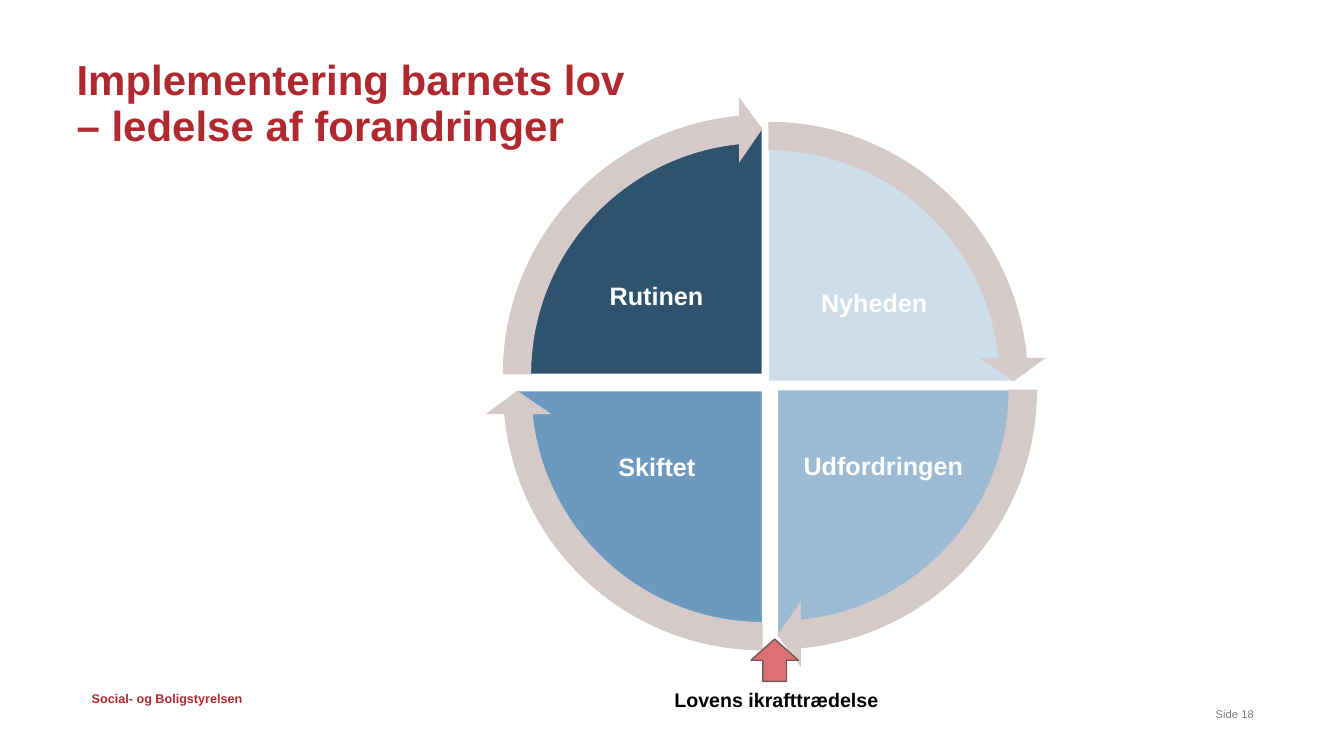
from pptx import Presentation
from pptx.dml.color import RGBColor
from pptx.enum.shapes import MSO_SHAPE
from pptx.enum.text import MSO_ANCHOR, MSO_AUTO_SIZE, PP_ALIGN
from pptx.util import Inches, Pt

COLUMNS, ROWS = 40, 22.5
SLIDE_WIDTH, SLIDE_HEIGHT = Inches(13.33), Inches(7.5)
COLORS = {
    "brand": "AF292E", "number": "7C7679", "white": "FFFFFF", "black": "000000",
    "ring": "D5CAC9", "marker": "DE7074", "marker_line": "705B59",
    "novelty": "CEDDEA", "challenge": "9CBBD5", "shift": "6B99C0", "routine": "2F526F",
}
FULL_TURN, QUARTER_TURN, TOP = 216, 54, 162
HEAD_ANGLE, RING_THICKNESS, HEAD_WIDTH = 3.275, 0.051, 0.059
WEDGE_DIAMETER, RING_DIAMETER = 14.73, 16.56
LABEL_SIZE, LABEL_OFFSET = (5.43, 4.05), (3.15, 2.3)
QUARTERS = [
    ("Nyheden", "novelty", (22.87, 11.35), (1, -1)),
    ("Udfordringen", "challenge", (23.14, 11.6), (1, 1)),
    ("Skiftet", "shift", (22.7, 11.63), (-1, 1)),
    ("Rutinen", "routine", (22.69, 11.14), (-1, -1)),
]


def place(column, row, columns, rows):
    """Turn grid cells into left, top, width and height."""
    cell_width, cell_height = SLIDE_WIDTH / COLUMNS, SLIDE_HEIGHT / ROWS
    return (round(column * cell_width), round(row * cell_height),
            round(columns * cell_width), round(rows * cell_height))


def centered(center, width, height):
    """Return the grid area of the given size around a centre."""
    return center[0] - width / 2, center[1] - height / 2, width, height


def apply(target, values):
    """Set every attribute named in a dict of values."""
    for name, value in values.items():
        setattr(target, name, value)


def write(box, text, size, color, bold=True, align=PP_ALIGN.LEFT,
          anchor=MSO_ANCHOR.TOP, inset=0, spacing=1.0):
    """Fill a box with one formatted paragraph."""
    frame = box.text_frame
    margins = ("margin_left", "margin_top", "margin_right", "margin_bottom")
    apply(frame, {"word_wrap": True, "auto_size": MSO_AUTO_SIZE.NONE, "vertical_anchor": anchor})
    apply(frame, dict.fromkeys(margins, Inches(inset)))
    para = frame.paragraphs[0]
    apply(para, {"alignment": align, "line_spacing": spacing})
    span = para.add_run()
    span.text = text
    apply(span.font, {"name": "Arial", "size": Pt(size), "bold": bold})
    span.font.color.rgb = RGBColor.from_string(COLORS[color])


def add_text(page, area, *content, **formats):
    """Add a text box on the grid."""
    write(page.shapes.add_textbox(*place(*area)), *content, **formats)


def add_figure(page, kind, area, fill, line=None, adjustments=()):
    """Add a filled preset shape on the grid."""
    figure = page.shapes.add_shape(kind, *place(*area))
    figure.shadow.inherit = False
    figure.fill.solid()
    figure.fill.fore_color.rgb = RGBColor.from_string(COLORS[fill])
    if line:
        figure.line.color.rgb = RGBColor.from_string(COLORS[line])
        figure.line.width = Pt(1)
    else:
        figure.line.fill.background()
    for index, value in enumerate(adjustments):
        figure.adjustments[index] = value
    return figure


def add_title(page, area, text):
    """Move and format the title placeholder."""
    title = page.shapes.title
    apply(title, dict(zip(("left", "top", "width", "height"), place(*area))))
    write(title, text, 30, "brand", spacing=0.9)


def quarter_start(index):
    """Return the start angle of a quarter, clockwise from the top."""
    return (TOP + index * QUARTER_TURN) % FULL_TURN


def add_wedge(page, index, name, color, center, side):
    """Add one quarter of the wheel with its label."""
    angles = quarter_start(index), quarter_start(index + 1)
    area = centered(center, WEDGE_DIAMETER, WEDGE_DIAMETER)
    add_figure(page, MSO_SHAPE.PIE, area, color, "white", angles)
    middle = [c + s * o for c, s, o in zip(center, side, LABEL_OFFSET)]
    add_text(page, centered(middle, *LABEL_SIZE), name, 18, "white", align=PP_ALIGN.CENTER,
             anchor=MSO_ANCHOR.MIDDLE, inset=0.03, spacing=0.9)


def add_ring_arrow(page, index, center):
    """Add the curved arrow along one quarter."""
    start = quarter_start(index)
    head = start + QUARTER_TURN - HEAD_ANGLE
    add_figure(page, MSO_SHAPE.CIRCULAR_ARROW, centered(center, RING_DIAMETER, RING_DIAMETER),
               "ring", adjustments=(RING_THICKNESS, HEAD_ANGLE, head, start, HEAD_WIDTH))


def main():
    """Build and save the slide."""
    deck = Presentation()
    apply(deck, {"slide_width": SLIDE_WIDTH, "slide_height": SLIDE_HEIGHT})
    page = deck.slides.add_slide(deck.slide_layouts[5])
    add_text(page, (2.73, 20.55, 4.71, 0.45), "Social- og Boligstyrelsen", 9, "brand")
    add_text(page, (30.21, 21.06, 7.11, 0.36), "Side 18", 8, "number", bold=False,
             align=PP_ALIGN.RIGHT, anchor=MSO_ANCHOR.MIDDLE)
    add_title(page, (2.28, 1.77, 16.56, 3.96),
              "Implementering barnets lov – ledelse af forandringer")
    for index, quarter in enumerate(QUARTERS):
        add_wedge(page, index, *quarter)
    for index, (_, _, center, _) in enumerate(QUARTERS):
        add_ring_arrow(page, index, center)
    marker = add_figure(page, MSO_SHAPE.DOWN_ARROW, (22.35, 19.02, 1.41, 1.26),
                        "marker", "marker_line")
    marker.rotation = 180
    add_text(page, (20.07, 20.46, 10.17, 0.72), "Lovens ikrafttrædelse", 14, "black")
    deck.save("out.pptx")


if __name__ == "__main__":
    main()
